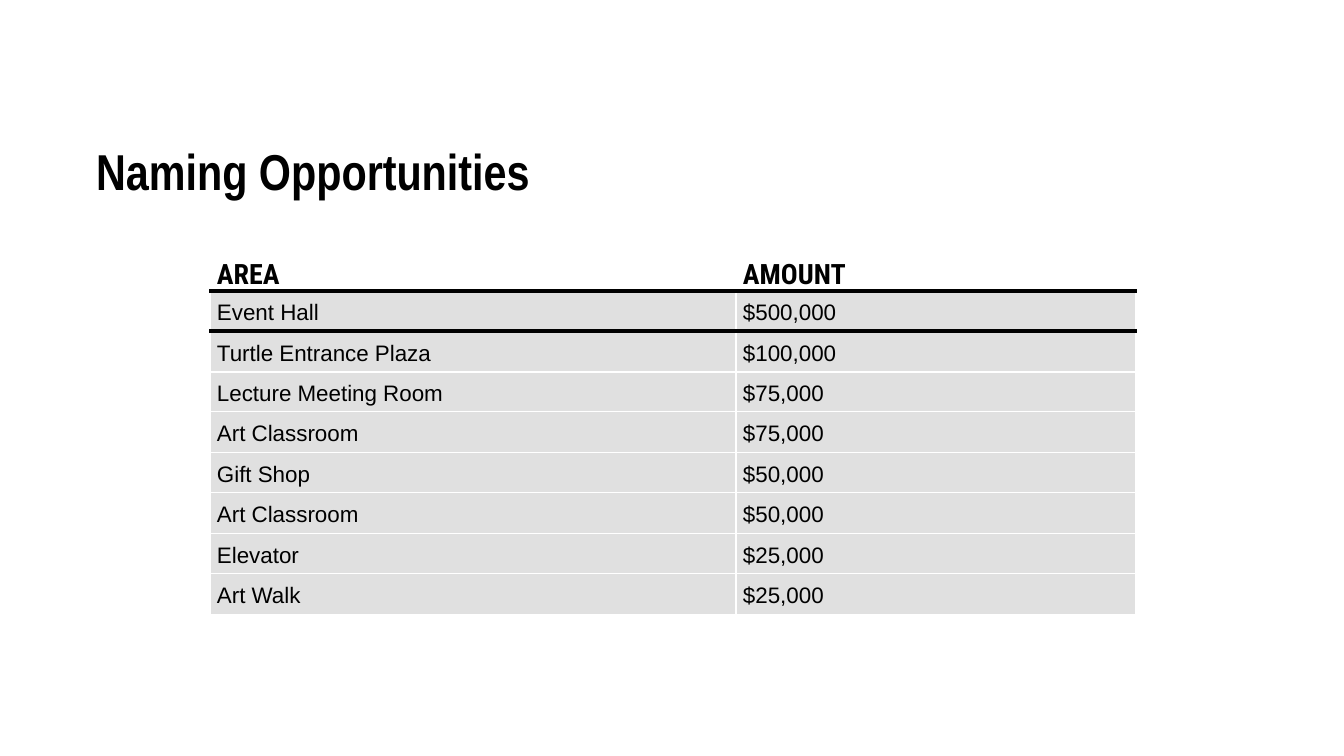
"""Builds the slide that lists the naming opportunities and their amounts."""
from lxml.etree import SubElement
from pptx import Presentation
from pptx.dml.color import RGBColor
from pptx.enum.text import MSO_ANCHOR, MSO_AUTO_SIZE, PP_ALIGN
from pptx.oxml.ns import qn
from pptx.util import Emu, Pt

SCALE = 914400 / 100.8
BLACK, WHITE, GREY = "000000", "FFFFFF", "E0E0E0"
TITLE = {"name": "Arial Narrow", "size": Pt(36), "bold": True}
HEAD = {"name": "Roboto Condensed", "size": Pt(20), "bold": True}
BODY = {"name": "Arial", "size": Pt(16), "bold": False}
WIDTHS = [526, 400]
ROWS = [
    ("AREA", "AMOUNT"),
    ("Event Hall", "$500,000"),
    ("Turtle Entrance Plaza", "$100,000"),
    ("Lecture Meeting Room", "$75,000"),
    ("Art Classroom", "$75,000"),
    ("Gift Shop", "$50,000"),
    ("Art Classroom", "$50,000"),
    ("Elevator", "$25,000"),
    ("Art Walk", "$25,000"),
]
RULED = {0, 1}


def px(count):
    """Turn pixels into EMU."""
    return Emu(round(count * SCALE))


def paint(color, code):
    """Set a colour from a hex string."""
    color.rgb = RGBColor.from_string(code)


def assign(target, values):
    """Set each attribute named in a dict."""
    for key, value in values.items():
        setattr(target, key, value)


def write(frame, text, font, spacing):
    """Fill a text frame with one left-aligned black paragraph."""
    frame.text = text
    para = frame.paragraphs[0]
    assign(para, {"alignment": PP_ALIGN.LEFT, "line_spacing": spacing})
    assign(para.runs[0].font, font)
    paint(para.runs[0].font.color, BLACK)


def border(cell, side, code, points):
    """Draw one side of a cell."""
    line = SubElement(cell._tc.get_or_add_tcPr(), qn(f"a:ln{side}"), w=str(Pt(points)))
    fill = SubElement(line, qn("a:solidFill"))
    SubElement(fill, qn("a:srgbClr"), val=code)


def add_title(slide, text):
    """Place and format the title."""
    title = slide.shapes.title
    assign(title, {"left": px(86), "top": px(142), "width": px(1159), "height": px(128)})
    frame = title.text_frame
    assign(frame, {"vertical_anchor": MSO_ANCHOR.TOP, "auto_size": MSO_AUTO_SIZE.NONE})
    write(frame, text, TITLE, 0.9)


def fill_cell(cell, text, row):
    """Write, rule and shade one table cell."""
    assign(cell, {
        "margin_left": px(7), "margin_right": px(7), "margin_top": 0,
        "margin_bottom": 0, "vertical_anchor": MSO_ANCHOR.MIDDLE,
    })
    write(cell.text_frame, text, BODY if row else HEAD, 1.15)
    rules = {"L": False, "R": False, "T": row - 1 in RULED, "B": row in RULED}
    for side, heavy in rules.items():
        border(cell, side, *((BLACK, 3) if heavy else (WHITE, 1)))
    cell.fill.solid()
    paint(cell.fill.fore_color, GREY if row else WHITE)


def add_grid(slide):
    """Add the table of areas and amounts."""
    heights = [38] + [40 + n % 2 for n in range(len(ROWS) - 1)]
    table = slide.shapes.add_table(
        len(ROWS), len(WIDTHS), px(210), px(253), px(sum(WIDTHS)), px(sum(heights))
    ).table
    for column, width in zip(table.columns, WIDTHS):
        column.width = px(width)
    for row, (height, texts) in enumerate(zip(heights, ROWS)):
        table.rows[row].height = px(height)
        for col, text in enumerate(texts):
            fill_cell(table.cell(row, col), text, row)


def main():
    """Build and save the deck."""
    deck = Presentation()
    assign(deck, {"slide_width": px(1344), "slide_height": px(756)})
    slide = deck.slides.add_slide(deck.slide_layouts[5])
    add_grid(slide)
    add_title(slide, "Naming Opportunities")
    deck.save("out.pptx")


if __name__ == "__main__":
    main()
